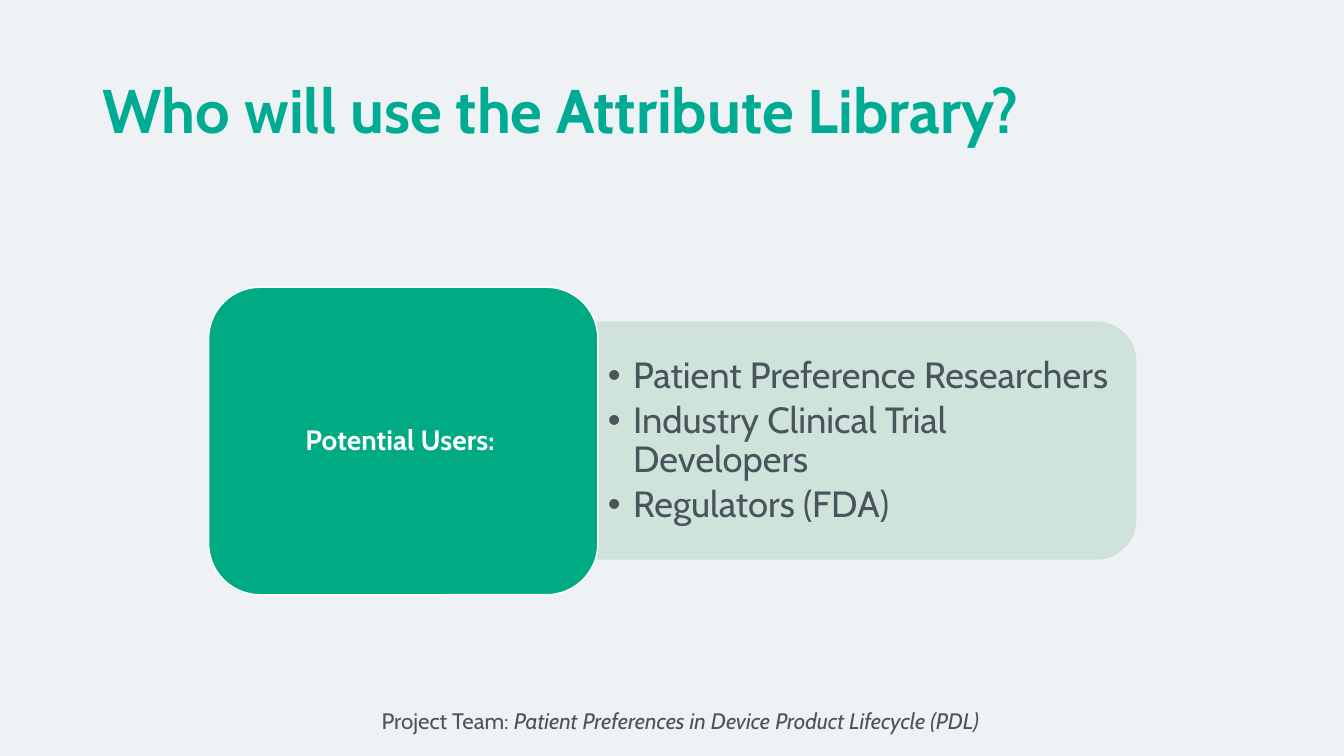
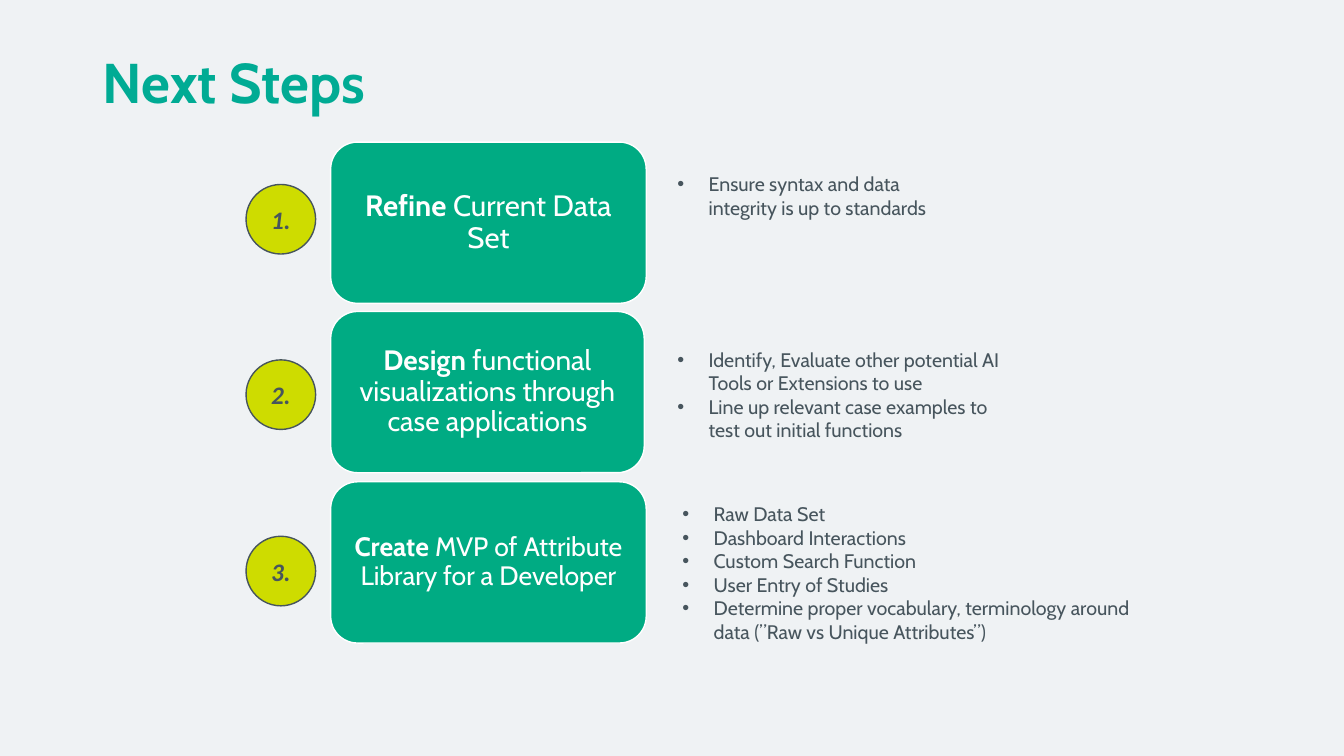
from lxml import etree
from pptx import Presentation
from pptx import util as u
from pptx.dml import color
from pptx.enum import shapes, text
from pptx.oxml import ns

PX = 9144
PAPER, TEAL, GREEN, MINT = "EFF2F4", "00AB94", "00AB83", "CCE2D9"
LIME, SLATE, WHITE = "CEDC00", "47555D", "FFFFFF"
KIND = shapes.MSO_SHAPE
MID, TOP = text.MSO_ANCHOR.MIDDLE, text.MSO_ANCHOR.TOP
CENTER, LEFT = text.PP_ALIGN.CENTER, text.PP_ALIGN.LEFT


def px(*nums):
    return [u.Emu(num * PX) for num in nums]


def paint(part, tone, alpha=100):
    part.solid()
    part.fore_color.rgb = color.RGBColor.from_string(tone)
    if alpha < 100:
        for node in part._xPr.iter(ns.qn("a:srgbClr")):
            if node.find(ns.qn("a:alpha")) is None:
                etree.SubElement(node, ns.qn("a:alpha"), val=str(alpha * 1000))


def bullet(para, dent):
    props = para._p.get_or_add_pPr()
    props.set("marL", str(dent * PX))
    props.set("indent", str(-dent * PX))
    etree.SubElement(props, ns.qn("a:buFont"), typeface="Arial")
    etree.SubElement(props, ns.qn("a:buChar"), char="•")


def write(shape, paras, size, tone, anchor=TOP, align=LEFT, inset=(10, 5),
          space=1.0, after=0, dent=0, **style):
    frame = shape.text_frame
    side, edge = px(*inset)
    look = {"word_wrap": True, "vertical_anchor": anchor, "margin_left": side,
            "margin_right": side, "margin_top": edge, "margin_bottom": edge}
    for name, value in look.items():
        setattr(frame, name, value)
    for num, runs in enumerate(paras):
        para = frame.add_paragraph() if num else frame.paragraphs[0]
        if dent:
            bullet(para, dent)
        for name, value in {"alignment": align, "line_spacing": space,
                            "space_after": u.Pt(after)}.items():
            setattr(para, name, value)
        for words, extra in runs:
            run = para.add_run()
            run.text = words
            font = {"name": "Cabin", "size": u.Pt(size), **style, **extra}
            for name, value in font.items():
                setattr(run.font, name, value)
            run.font.color.rgb = color.RGBColor.from_string(tone)


def label(slide, box, paras, size, tone, **opts):
    write(slide.shapes.add_textbox(*px(*box)), paras, size, tone, **opts)


def block(slide, kind, box, fill, line, alpha=100):
    shape = slide.shapes.add_shape(kind, *px(*box))
    shape.shadow.inherit = False
    paint(shape.fill, fill, alpha)
    paint(shape.line.fill, line, alpha)
    shape.line.width = u.Pt(1)
    return shape


def card(slide, box, runs, size):
    shape = block(slide, KIND.ROUNDED_RECTANGLE, box, GREEN, WHITE)
    write(shape, [runs], size, WHITE, anchor=MID, align=CENTER,
          inset=(8, 4), space=0.9)


def badge(slide, box, words):
    shape = block(slide, KIND.OVAL, box, LIME, SLATE)
    write(shape, [[(words, {})]], 18, SLATE, anchor=MID, align=CENTER,
          name="Calibri", bold=True, italic=True)


def points(slide, box, items, size, dent, **opts):
    label(slide, box, [[(item, {})] for item in items], size, SLATE,
          dent=dent, **opts)


def page(deck, title, size, tall):
    slide = deck.slides.add_slide(deck.slide_layouts[6])
    paint(slide.background.fill, PAPER)
    label(slide, (92, 40, 1150, tall), [[(title, {})]], size, TEAL,
          anchor=MID, space=0.9, bold=True)
    return slide


def users(deck):
    slide = page(deck, "Who will use the Attribute Library?", 44, 145)
    panel = block(slide, KIND.ROUND_2_SAME_RECTANGLE, (742, 170, 235, 534),
                  MINT, MINT, 90)
    panel.rotation = 90
    points(slide, (592, 332, 523, 212),
           ["Patient Preference Researchers",
            "Industry Clinical Trial Developers", "Regulators (FDA)"],
           26, 25, anchor=MID, inset=(11, 5), space=0.9, after=4)
    card(slide, (207, 285, 386, 305),
         [("Potential Users: ", {"bold": True})], 20)
    label(slide, (295, 697, 760, 37),
          [[("Project Team: ", {}),
            ("Patient Preferences in Device Product Lifecycle (PDL)",
             {"italic": True})]], 16, SLATE, align=CENTER)


def steps(deck):
    slide = page(deck, "Next Steps", 40, 89)
    rows = [
        ("Refine", " Current Data Set", 21, 313, (662, 166, 289, 57),
         ["Ensure syntax and data integrity is up to standards"]),
        ("Design", " functional visualizations through case applications",
         20, 311, (662, 340, 347, 104),
         ["Identify, Evaluate other potential AI Tools or Extensions to use",
          "Line up relevant case examples to test out initial functions"]),
        ("Create", " MVP of Attribute Library for a Developer",
         19, 313, (667, 493, 501, 151),
         ["Raw Data Set", "Dashboard Interactions", "Custom Search Function",
          "User Entry of Studies",
          "Determine proper vocabulary, terminology around data "
          "(”Raw vs Unique Attributes”)"]),
    ]
    for num, (verb, rest, size, wide, box, items) in enumerate(rows):
        card(slide, (328, 141 + 337 * num // 2, wide, 160),
             [(verb, {"bold": True}), (rest, {})], size)
        badge(slide, (244, 183 + 349 * num // 2, 69, 69), f"{num + 1}.")
        points(slide, box, items, 14, 31)


def main():
    deck = Presentation()
    deck.slide_width, deck.slide_height = px(1333, 750)
    users(deck)
    steps(deck)
    deck.save("out.pptx")


if __name__ == "__main__":
    main()
